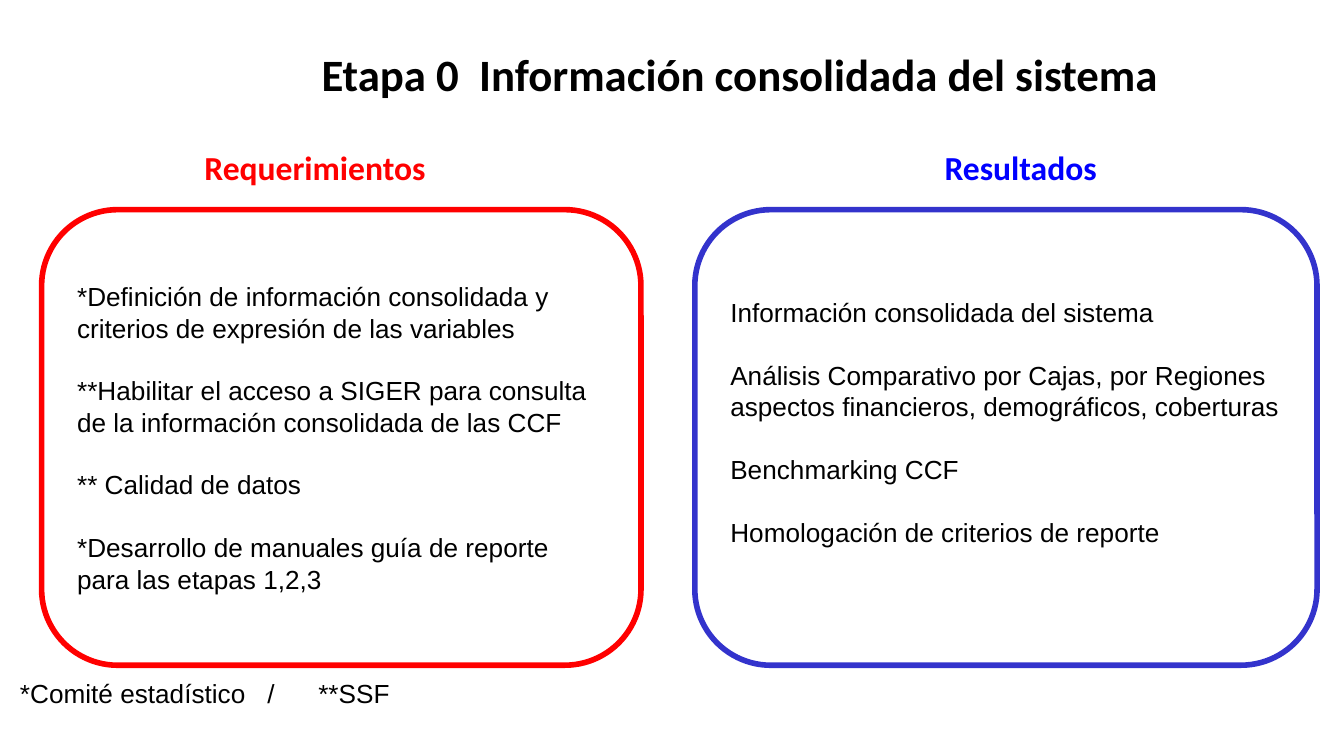
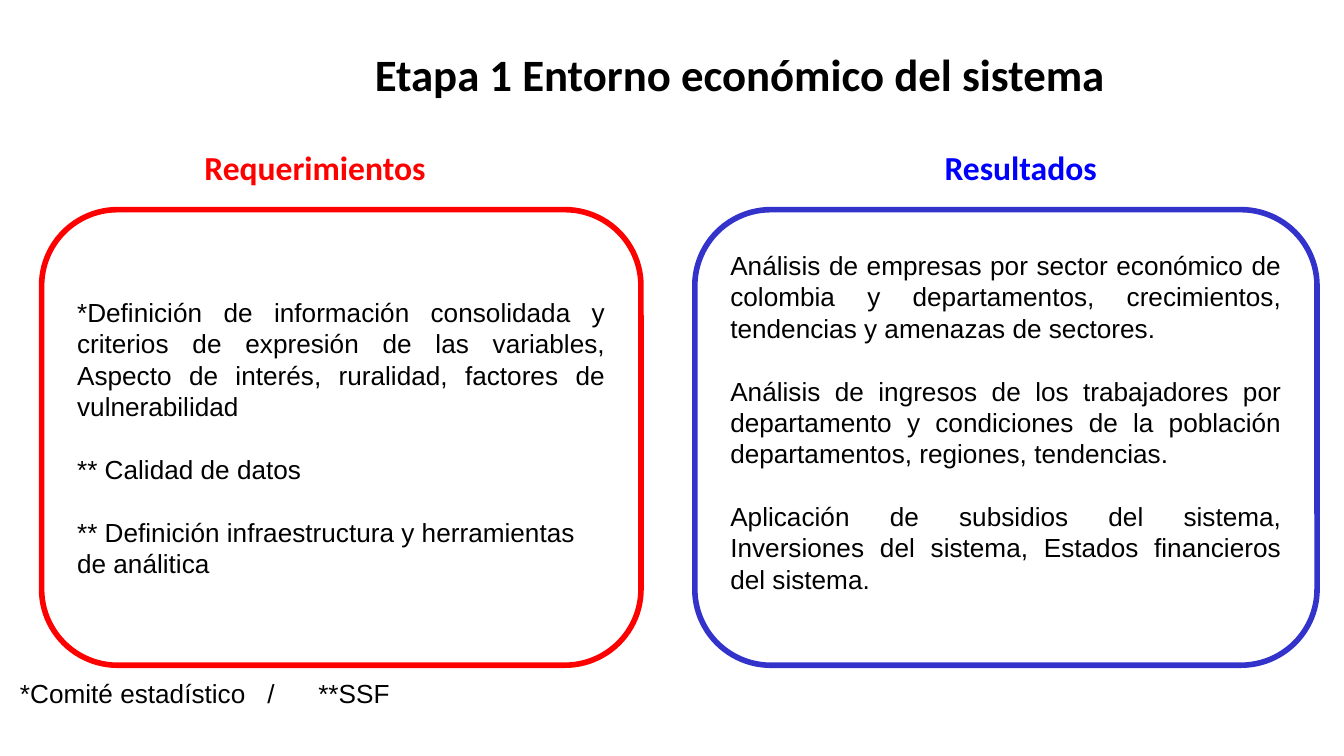
from lxml.etree import SubElement
from pptx import Presentation
from pptx.dml.color import RGBColor
from pptx.enum.shapes import MSO_SHAPE as Shape
from pptx.enum.text import MSO_ANCHOR as Anchor, MSO_AUTO_SIZE as AutoSize, PP_ALIGN as Align
from pptx.oxml.ns import qn
from pptx.util import Inches, Pt

BLACK, WHITE = "000000", "FFFFFF"
RED, BLUE, BORDER_BLUE = "FF0000", "0000FF", "3333CC"
HEADING_FONT, BODY_FONT = "Calibri", "Arial"
BODY_SIZE = 14
LINE_HEIGHT = 16.8
INSET = 0.1
LEFT, JUSTIFIED = Align.LEFT, Align.JUSTIFY

STAGES = [
    {
        "title": "Etapa 0  Información consolidada del sistema",
        "requirements": [
            ("*Definición de información consolidada y criterios de expresión de las variables", LEFT),
            ("**Habilitar el acceso a SIGER para consulta de la información consolidada de las CCF", LEFT),
            ("** Calidad de datos", LEFT),
            ("*Desarrollo de manuales guía de reporte para las etapas 1,2,3", LEFT),
        ],
        "results": [
            ("Información consolidada del sistema", LEFT),
            ("Análisis Comparativo por Cajas, por Regiones aspectos financieros, "
             "demográficos, coberturas", LEFT),
            ("Benchmarking CCF", LEFT),
            ("Homologación de criterios de reporte", LEFT),
        ],
    },
    {
        "title": "Etapa 1 Entorno económico del sistema",
        "requirements": [
            ("*Definición de información consolidada y criterios de expresión de las variables, "
             "Aspecto de interés, ruralidad, factores de vulnerabilidad", JUSTIFIED),
            ("** Calidad de datos", LEFT),
            ("** Definición infraestructura y herramientas de análitica", LEFT),
        ],
        "results": [
            ("Análisis de empresas por sector económico de colombia y departamentos, "
             "crecimientos, tendencias y amenazas de sectores.", JUSTIFIED),
            ("Análisis de ingresos de los trabajadores por departamento y condiciones de la "
             "población departamentos, regiones, tendencias.", JUSTIFIED),
            ("Aplicación de subsidios del sistema, Inversiones del sistema, "
             "Estados financieros del sistema.", JUSTIFIED),
        ],
    },
]


def color(value):
    return RGBColor.from_string(value)


class StageDeck:
    """Holds the presentation, its style and the current slide."""

    def __init__(self):
        self.presentation = Presentation()
        self.presentation.slide_width = Inches(10)
        self.presentation.slide_height = Inches(10) * 9 // 16
        self.slide = None

    def add_slide(self):
        self.slide = self.presentation.slides.add_slide(self.presentation.slide_layouts[6])

    def set_insets(self, frame, inset, bottom=None):
        frame.word_wrap = True
        frame.margin_left = frame.margin_right = frame.margin_top = Inches(inset)
        frame.margin_bottom = Inches(inset if bottom is None else bottom)

    def format_runs(self, paragraph, size, font, text_color, bold=False):
        for run in paragraph.runs:
            run.font.size = Pt(size)
            run.font.name = font
            run.font.bold = bold
            run.font.color.rgb = color(text_color)

    def add_text_box(self, left, top, width, height, inset=INSET):
        box = self.slide.shapes.add_textbox(Inches(left), Inches(top), Inches(width), Inches(height))
        self.set_insets(box.text_frame, inset)
        return box.text_frame

    def write_heading(self, frame, text, size, text_color):
        frame.text = text
        paragraph = frame.paragraphs[0]
        paragraph.alignment = Align.CENTER
        paragraph.line_spacing = 1.15
        self.format_runs(paragraph, size, HEADING_FONT, text_color, bold=True)

    def add_title(self, text):
        frame = self.add_text_box(1.52, 0.05, 7.97, 0.94, inset=0)
        frame.vertical_anchor = Anchor.MIDDLE
        self.write_heading(frame, text, 24, BLACK)

    def add_column_heading(self, text, left, text_color):
        frame = self.add_text_box(left, 0.95, 4.07, 0.79)
        frame.auto_size = AutoSize.SHAPE_TO_FIT_TEXT
        self.write_heading(frame, text, 18, text_color)

    def add_panel(self, items, left, width, border, bottom=INSET):
        """Draw a rounded panel; a larger bottom inset raises its centred text."""
        panel = self.slide.shapes.add_shape(
            Shape.ROUNDED_RECTANGLE, Inches(left), Inches(1.56), Inches(width), Inches(3.39))
        panel.shadow.inherit = False
        panel.adjustments[0] = 0.167
        panel.fill.solid()
        panel.fill.fore_color.rgb = color(WHITE)
        panel.line.color.rgb = color(border)
        panel.line.width = Pt(3)
        frame = panel.text_frame
        self.set_insets(frame, INSET, bottom)
        frame.vertical_anchor = Anchor.MIDDLE
        for index, (text, alignment) in enumerate(items):
            paragraph = frame.add_paragraph() if index else frame.paragraphs[0]
            paragraph.text = text
            paragraph.alignment = alignment
            if index:
                paragraph.space_before = Pt(LINE_HEIGHT)
            self.format_runs(paragraph, BODY_SIZE, BODY_FONT, BLACK)

    def add_footnote(self):
        frame = self.add_text_box(0.05, 4.94, 3.05, 0.44)
        frame.auto_size = AutoSize.SHAPE_TO_FIT_TEXT
        frame.text = "*Comité estadístico\t/\t**SSF"
        paragraph = frame.paragraphs[0]
        tabs = SubElement(paragraph._p.get_or_add_pPr(), qn("a:tabLst"))
        for position in (1.84, 2.22):
            SubElement(tabs, qn("a:tab"), pos=str(int(Inches(position))), algn="l")
        self.format_runs(paragraph, BODY_SIZE, BODY_FONT, BLACK)

    def add_stage(self, title, requirements, results):
        self.add_slide()
        self.add_title(title)
        self.add_panel(requirements, 0.31, 4.46, RED)
        self.add_panel(results, 5.17, 4.63, BORDER_BLUE, bottom=0.33)
        self.add_column_heading("Requerimientos", 0.31, RED)
        self.add_column_heading("Resultados", 5.56, BLUE)
        self.add_footnote()


def main():
    deck = StageDeck()
    for stage in STAGES:
        deck.add_stage(**stage)
    deck.presentation.save("out.pptx")


if __name__ == "__main__":
    main()
